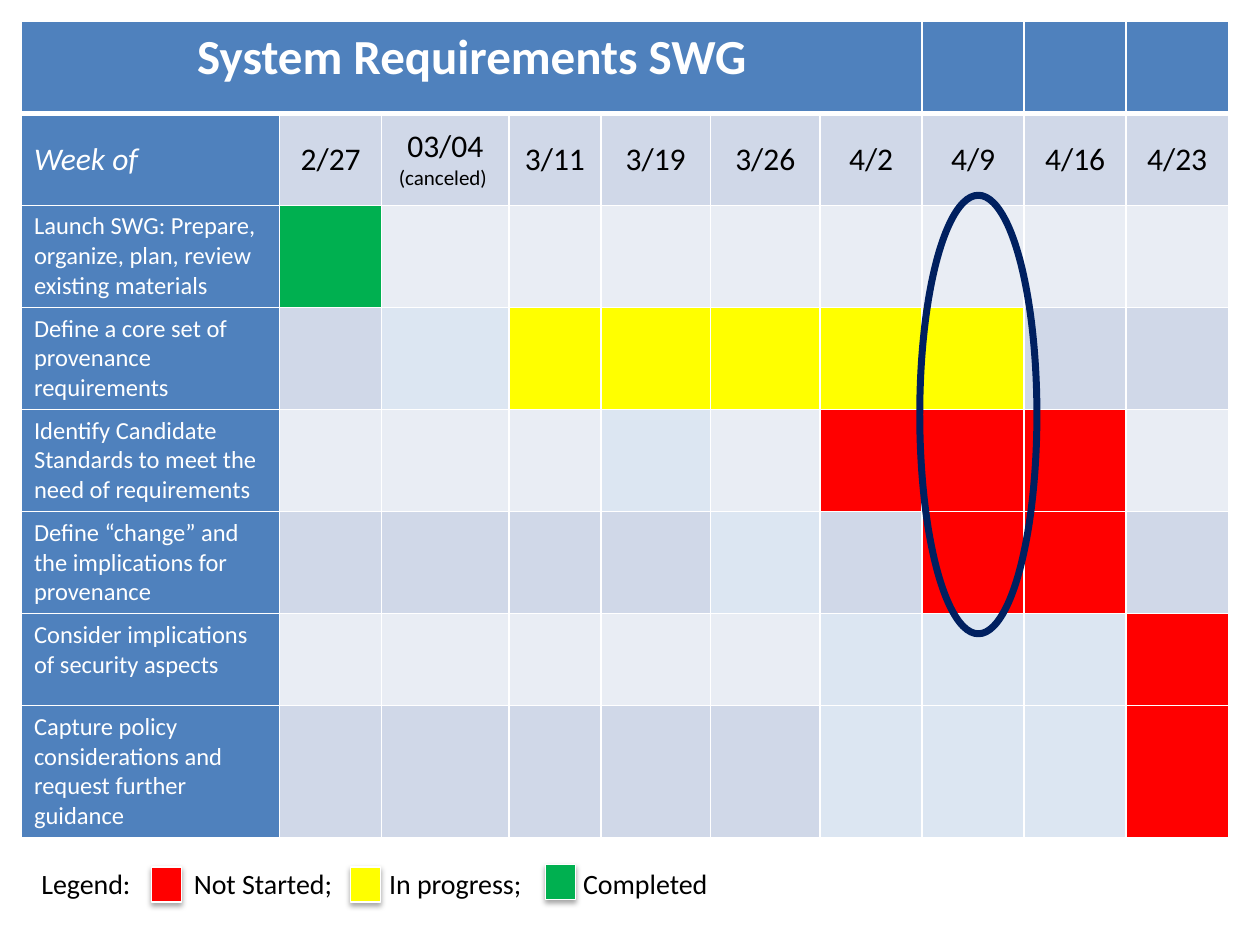
import pptx
import pptx.dml.color
import pptx.enum.shapes
import pptx.enum.text
import pptx.oxml.ns
import pptx.util
from lxml import etree

Inches = pptx.util.Inches
Pt = pptx.util.Pt
RGBColor = pptx.dml.color.RGBColor
Shape = pptx.enum.shapes.MSO_SHAPE
Align = pptx.enum.text.PP_ALIGN
Anchor = pptx.enum.text.MSO_ANCHOR
qn = pptx.oxml.ns.qn

WHITE = RGBColor(0xFF, 0xFF, 0xFF)
BLACK = RGBColor(0, 0, 0)
BLUE = RGBColor(0x4F, 0x81, 0xBD)
NAVY = RGBColor(0, 0x20, 0x60)
BAND_DARK = RGBColor(0xD0, 0xD8, 0xE8)
BAND_LIGHT = RGBColor(0xE9, 0xED, 0xF4)
PALE = RGBColor(0xDC, 0xE6, 0xF2)
GREEN = RGBColor(0, 0xB0, 0x50)
YELLOW = RGBColor(0xFF, 0xFF, 0)
RED = RGBColor(0xFF, 0, 0)

STATUS_COLORS = {"C": GREEN, "P": YELLOW, "N": RED, "o": PALE}
COLUMN_WIDTHS = [2.05, 0.81, 1.01, 0.73, 0.87, 0.87, 0.81, 0.81, 0.81, 0.81]
ROW_HEIGHT = 0.73
WEEKS = ["2/27", "03/04 ", "3/11", "3/19", "3/26", "4/2", "4/9", "4/16", "4/23"]
CANCELED_WEEK = "03/04 "
# One letter per week: a key of STATUS_COLORS, or a dot for the row's band colour.
TASKS = [
    ("Launch SWG: Prepare, organize, plan, review existing materials", "C........"),
    ("Define a core set of provenance requirements", ".oPPPPP.."),
    ("Identify Candidate Standards to meet the need of requirements", "...o.NNN."),
    ("Define “change” and the implications for provenance", "....o.NN."),
    ("Consider implications of security aspects", ".....oooN"),
    ("Capture policy considerations and request further guidance", ".....oooN"),
]


def add_text(paragraph, text, size=18, color=BLACK, bold=False, italic=False,
             align=Align.LEFT, font_name="Calibri"):
    paragraph.alignment = align
    run = paragraph.add_run()
    run.text = text
    run.font.name = font_name
    run.font.size = Pt(size)
    run.font.color.rgb = color
    run.font.bold = bold
    run.font.italic = italic


def set_borders(cell, **widths):
    """Draw white cell borders; widths in points by side letter, 1 by default."""
    properties = cell._tc.get_or_add_tcPr()
    for side in "LRTB":
        line = etree.SubElement(properties, qn(f"a:ln{side}"),
                                w=str(Pt(widths.get(side, 1))))
        fill = etree.SubElement(line, qn("a:solidFill"))
        etree.SubElement(fill, qn("a:srgbClr"), val=str(WHITE))


class SlideBuilder:
    def __init__(self, slide):
        self.slide = slide

    def cell(self, table, row, column, fill, **borders):
        cell = table.cell(row, column)
        set_borders(cell, **borders)
        cell.fill.solid()
        cell.fill.fore_color.rgb = fill
        return cell

    def schedule(self, left, top):
        row_count = len(TASKS) + 2
        table = self.slide.shapes.add_table(
            row_count, len(COLUMN_WIDTHS), Inches(left), Inches(top),
            Inches(sum(COLUMN_WIDTHS)), Inches(ROW_HEIGHT * row_count)).table
        for column, width in zip(table.columns, COLUMN_WIDTHS):
            column.width = Inches(width)
        for row in table.rows:
            row.height = Inches(ROW_HEIGHT)

        for column in range(len(COLUMN_WIDTHS)):
            self.cell(table, 0, column, BLUE, B=3)
        title = table.cell(0, 0)
        title.merge(table.cell(0, 6))
        add_text(title.text_frame.paragraphs[0], "System Requirements SWG",
                 size=28, color=WHITE, bold=True, align=Align.CENTER)

        heading = self.cell(table, 1, 0, BLUE, T=3)
        heading.vertical_anchor = Anchor.MIDDLE
        add_text(heading.text_frame.paragraphs[0], "Week of", color=WHITE, italic=True)
        for column, week in enumerate(WEEKS, start=1):
            cell = self.cell(table, 1, column, BAND_DARK, T=3)
            cell.vertical_anchor = Anchor.MIDDLE
            paragraph = cell.text_frame.paragraphs[0]
            add_text(paragraph, week, align=Align.CENTER)
            if week == CANCELED_WEEK:
                add_text(paragraph, "(canceled) ", size=12, align=Align.CENTER)

        for row, (task, statuses) in enumerate(TASKS, start=2):
            label = self.cell(table, row, 0, BLUE)
            add_text(label.text_frame.paragraphs[0], task, size=14, color=WHITE)
            band = BAND_DARK if row % 2 else BAND_LIGHT
            for column, status in enumerate(statuses, start=1):
                self.cell(table, row, column, STATUS_COLORS.get(status, band))

    def shape(self, kind, left, top, width, height, fill=None, line=None, line_width=0.75):
        shape = self.slide.shapes.add_shape(
            kind, Inches(left), Inches(top), Inches(width), Inches(height))
        shape.shadow.inherit = False
        if fill is None:
            shape.fill.background()
        else:
            shape.fill.solid()
            shape.fill.fore_color.rgb = fill
        if line is None:
            shape.line.fill.background()
        else:
            shape.line.color.rgb = line
            shape.line.width = Pt(line_width)
        return shape

    def legend_text(self, left, top, width, height, text, tabs):
        box = self.shape(Shape.RECTANGLE, left, top, width, height, fill=WHITE)
        frame = box.text_frame
        frame.word_wrap = True
        frame.vertical_anchor = Anchor.TOP
        paragraph = frame.paragraphs[0]
        tab_list = etree.SubElement(paragraph._p.get_or_add_pPr(), qn("a:tabLst"))
        for position in tabs:
            etree.SubElement(tab_list, qn("a:tab"), pos=str(Inches(position)), algn="l")
        add_text(paragraph, text, size=16)

    def legend_swatch(self, left, top, color):
        swatch = self.shape(Shape.RECTANGLE, left, top, 0.24, 0.28, fill=color, line=WHITE)
        effects = swatch._element.spPr.find(qn("a:effectLst"))
        shadow = etree.SubElement(effects, qn("a:outerShdw"), blurRad=str(Pt(3.1)),
                                  dist=str(Pt(1.8)), dir="5400000", rotWithShape="0")
        shade = etree.SubElement(shadow, qn("a:srgbClr"), val=str(BLACK))
        etree.SubElement(shade, qn("a:alpha"), val="35000")


def main():
    presentation = pptx.Presentation()
    presentation.slide_width = Inches(10)
    presentation.slide_height = Inches(7.5)
    builder = SlideBuilder(presentation.slides.add_slide(presentation.slide_layouts[6]))

    builder.schedule(0.17, 0.17)
    builder.legend_text(0.23, 6.83, 7.06, 0.37,
                        "Legend:\tNot Started;\tIn progress;\tCompleted",
                        tabs=[1.21, 2.76, 4.3])
    for left, top, color in [(1.2, 6.88, RED), (4.33, 6.86, GREEN), (2.78, 6.88, YELLOW)]:
        builder.legend_swatch(left, top, color)
    builder.shape(Shape.OVAL, 7.3, 1.55, 0.93, 3.48, line=NAVY, line_width=4)

    presentation.save("out.pptx")


if __name__ == "__main__":
    main()
